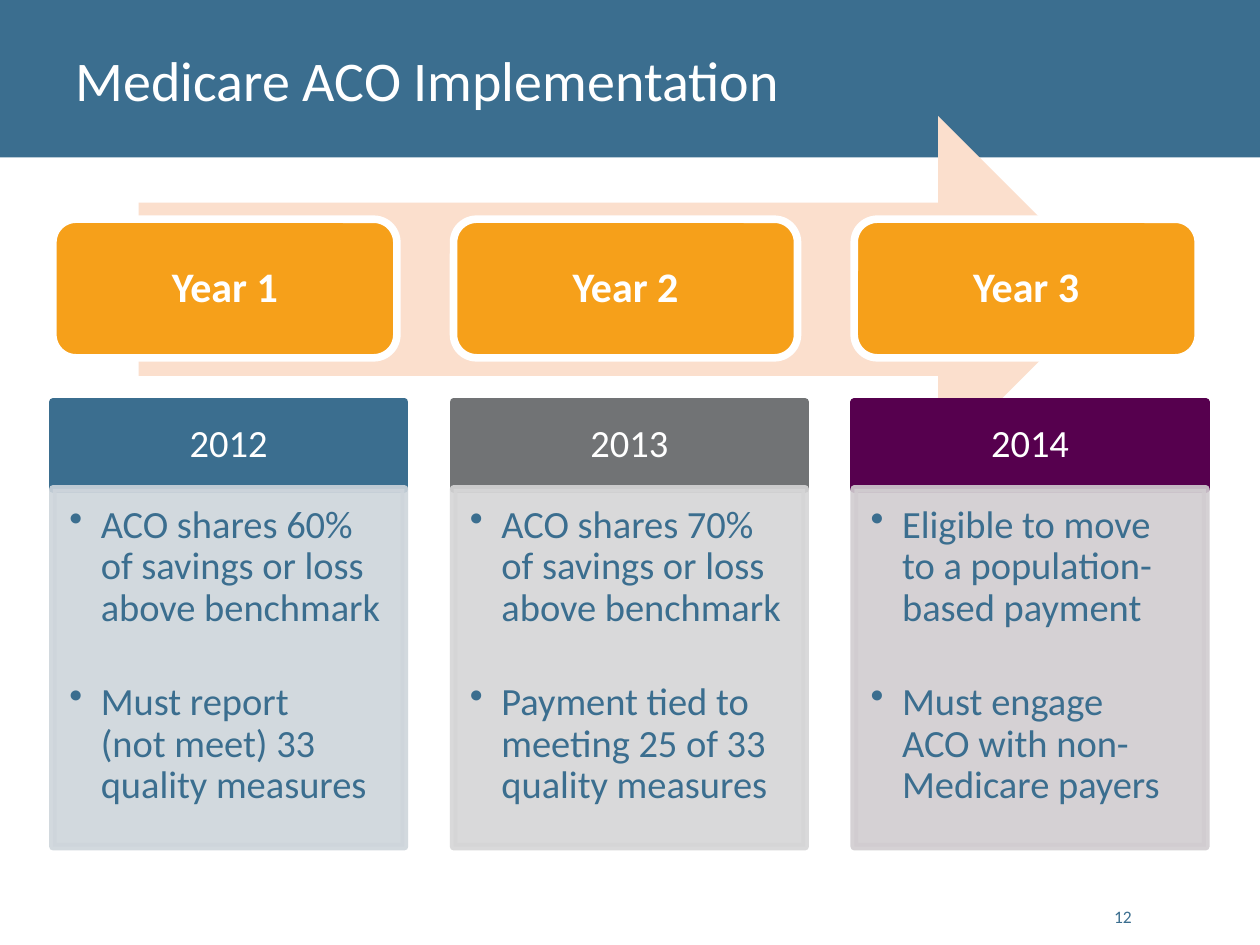
from lxml import etree
from pptx import Presentation
from pptx.dml.color import RGBColor
from pptx.enum.shapes import MSO_SHAPE
from pptx.enum.text import MSO_ANCHOR, PP_ALIGN
from pptx.oxml.ns import qn
from pptx.util import Inches, Pt

RECT, ROUND, ARROW = MSO_SHAPE.RECTANGLE, MSO_SHAPE.ROUNDED_RECTANGLE, MSO_SHAPE.RIGHT_ARROW
TOP, MIDDLE, BOTTOM = MSO_ANCHOR.TOP, MSO_ANCHOR.MIDDLE, MSO_ANCHOR.BOTTOM
LEFT, CENTER, RIGHT = PP_ALIGN.LEFT, PP_ALIGN.CENTER, PP_ALIGN.RIGHT

WHITE = RGBColor(0xFF, 0xFF, 0xFF)
BLUE = RGBColor(0x3B, 0x6E, 0x8F)
GRAY = RGBColor(0x71, 0x73, 0x75)
PLUM = RGBColor(0x56, 0x00, 0x4E)
ORANGE = RGBColor(0xF6, 0xA0, 0x1A)
PEACH = RGBColor(0xFB, 0xDF, 0xCD)
PALE_BLUE = RGBColor(0xCE, 0xD5, 0xDB)
PALE_GRAY = RGBColor(0xD5, 0xD5, 0xD6)
PALE_PLUM = RGBColor(0xD1, 0xCC, 0xD0)

TITLE = "Medicare ACO Implementation"
PAGE = "12"
YEARS = [
    ("Year 1", "2012", BLUE, PALE_BLUE,
     ["ACO shares 60% of savings or loss above benchmark",
      "Must report\v(not meet) 33 quality measures"]),
    ("Year 2", "2013", GRAY, PALE_GRAY,
     ["ACO shares 70%\vof savings or loss above benchmark",
      "Payment tied to meeting 25 of 33 quality measures"]),
    ("Year 3", "2014", PLUM, PALE_PLUM,
     ["Eligible to move\vto a population-based payment",
      "Must engage\vACO with non-Medicare payers"]),
]
WIDE, HIGH, BAND = 10, 7.5, 1.25
START, STEP, COL, STAGE = 0.42, 3.18, 2.79, 2.73
HEAD_TOP, HEAD, BODY = 3.19, 0.69, 2.84

deck = Presentation()
deck.slide_width, deck.slide_height = Inches(WIDE), Inches(HIGH)
slide = deck.slides.add_slide(deck.slide_layouts[6])


def add_box(kind, place, fill, line=None, alpha=None):
    shape = slide.shapes.add_shape(kind, *map(Inches, place))
    shape.shadow.inherit = False
    shape.fill.solid()
    shape.fill.fore_color.rgb = fill
    if line is None:
        shape.line.fill.background()
    else:
        shape.line.color.rgb = line
        shape.line.width = Pt(4.33)
    if alpha:
        for tint in shape._element.spPr.iter(qn("a:srgbClr")):
            etree.SubElement(tint, qn("a:alpha"), val=str(alpha * 1000))
    return shape


def add_text(shape, lines, size, color, bold=False, align=CENTER, anchor=MIDDLE,
             inset=(0.1, 0.05, 0.1, 0.05), space=1, bullet=False):
    frame = shape.text_frame
    sides = ("margin_left", "margin_top", "margin_right", "margin_bottom")
    look = dict(zip(sides, map(Inches, inset)), word_wrap=True, vertical_anchor=anchor)
    for name, value in look.items():
        setattr(frame, name, value)
    font = {"name": "Calibri", "size": Pt(size), "bold": bold}
    for i, line in enumerate(lines):
        para = frame.paragraphs[0] if i == 0 else frame.add_paragraph()
        para.text = line
        para.alignment, para.line_spacing = align, space
        if i:
            para.space_before = Pt(30)
        if bullet:
            props = para._p.get_or_add_pPr()
            props.set("marL", str(Inches(0.25)))
            props.set("indent", str(Inches(-0.25)))
            etree.SubElement(props, qn("a:buChar"), char="•")
        for run in para.runs:
            for name, value in font.items():
                setattr(run.font, name, value)
            run.font.color.rgb = color


add_box(RECT, (0, 0, WIDE, BAND), BLUE)
title = slide.shapes.add_textbox(*map(Inches, (0.5, 0, 9, BAND)))
add_text(title, [TITLE], 32, WHITE, align=LEFT)
page = slide.shapes.add_textbox(*map(Inches, (8.68, 7.01, 0.4, 0.4)))
add_text(page, [PAGE], 10, BLUE, align=RIGHT, anchor=BOTTOM)
add_box(ARROW, (1.1, 0.92, 7.72, 2.75), PEACH)

for i, (stage, year, dark, pale, points) in enumerate(YEARS):
    left = START + i * STEP
    step = add_box(ROUND, (left, 1.74, STAGE, 1.1), ORANGE, WHITE)
    add_text(step, [stage], 24, WHITE, bold=True, space=0.9)
    head = add_box(RECT, (left, HEAD_TOP, COL, HEAD), dark, dark)
    add_text(head, [year], 22, WHITE, space=0.9)
    body = add_box(RECT, (left, HEAD_TOP + HEAD, COL, BODY), pale, pale, 90)
    add_text(body, points, 22, BLUE, align=LEFT, anchor=TOP,
             inset=(0.13, 0.13, 0.17, 0.19), space=0.9, bullet=True)

deck.save("out.pptx")
